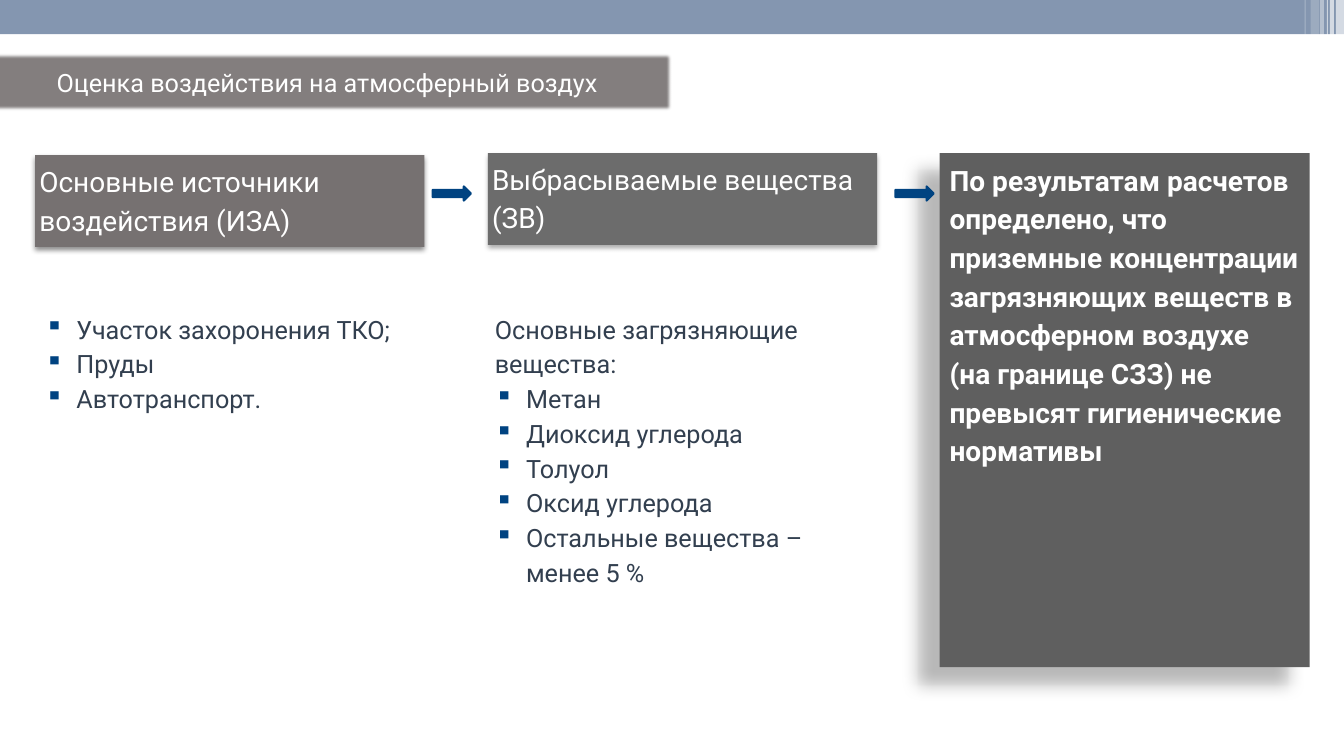
from dataclasses import dataclass

from lxml import etree
from pptx import Presentation
from pptx.dml.color import RGBColor
from pptx.enum.shapes import MSO_SHAPE
from pptx.enum.text import MSO_ANCHOR, MSO_AUTO_SIZE, PP_ALIGN
from pptx.oxml.ns import qn
from pptx.util import Inches, Pt

RECT, ARROW = MSO_SHAPE.RECTANGLE, MSO_SHAPE.RIGHT_ARROW
TOP, MIDDLE = MSO_ANCHOR.TOP, MSO_ANCHOR.MIDDLE
LEFT, CENTER = PP_ALIGN.LEFT, PP_ALIGN.CENTER
GROW = MSO_AUTO_SIZE.SHAPE_TO_FIT_TEXT


@dataclass(frozen=True)
class Theme:
    font: str = "Roboto"
    head: int = 20
    body: int = 18
    white: str = "FFFFFF"
    bar: str = "8496B0"
    banner: str = "767171"
    source: str = "767171"
    matter: str = "6C6C6C"
    result: str = "5F5F5F"
    accent: str = "004381"
    ink: str = "323F4F"
    shade: str = "000000"
    spacing: float = 1.15


def add(parent, tag, **attrs):
    """Append a DrawingML child with the given attributes."""
    node = etree.SubElement(parent, qn(f"a:{tag}"))
    for name, value in attrs.items():
        node.set(name, str(value))
    return node


class Deck:
    def __init__(self, theme):
        self.theme = theme
        self.prs = Presentation()
        self.prs.slide_width = Inches(13.33)
        self.prs.slide_height = Inches(7.5)
        self.slide = self.prs.slides.add_slide(self.prs.slide_layouts[6])

    def shape(self, box, color, kind=RECT, alpha=100):
        item = self.slide.shapes.add_shape(kind, *map(Inches, box))
        item.shadow.inherit = False
        item.fill.solid()
        item.fill.fore_color.rgb = RGBColor.from_string(color)
        item.line.fill.background()
        if alpha < 100:
            tint = item._element.spPr.find(qn("a:solidFill"))[0]
            add(tint, "alpha", val=alpha * 1000)
        return item

    def effects(self, item):
        return item._element.spPr.find(qn("a:effectLst"))

    def shadow(self, item, alpha, blur, dist, angle):
        cast = add(self.effects(item), "outerShdw", blurRad=Pt(blur),
                   dist=Pt(dist), dir=angle * 60000, rotWithShape=0)
        tint = add(cast, "srgbClr", val=self.theme.shade)
        add(tint, "alpha", val=alpha * 1000)

    def soften(self, item, radius):
        add(self.effects(item), "softEdge", rad=Pt(radius))

    def label(self, item, lines, size, color, bold=False, inset=None,
              anchor=TOP, align=LEFT, spacing=None):
        frame = item.text_frame
        frame.word_wrap = True
        frame.vertical_anchor = anchor
        if inset is not None:
            frame.margin_left = frame.margin_right = Inches(inset)
            frame.margin_top = frame.margin_bottom = Inches(inset)
        frame.text = "\n".join(lines)
        for para in frame.paragraphs:
            para.alignment = align
            para.line_spacing = spacing
            for run in para.runs:
                run.font.name = self.theme.font
                run.font.size = Pt(size)
                run.font.bold = bold
                run.font.color.rgb = RGBColor.from_string(color)

    def panel(self, box, color, lines, shadow, **style):
        item = self.shape(box, color)
        self.shadow(item, *shadow)
        self.label(item, lines, self.theme.head, self.theme.white,
                   spacing=self.theme.spacing, **style)

    def arrow(self, left, top):
        item = self.shape((left, top, 0.38, 0.14), self.theme.accent, ARROW)
        item.line.color.rgb = RGBColor.from_string(self.theme.accent)
        item.line.width = Pt(1.5)

    def bullets(self, box, items, intro=()):
        item = self.slide.shapes.add_textbox(*map(Inches, box))
        self.label(item, [*intro, *items], self.theme.body, self.theme.ink,
                   spacing=self.theme.spacing)
        item.text_frame.auto_size = GROW
        for para in item.text_frame.paragraphs[len(intro):]:
            props = para._p.get_or_add_pPr()
            props.set("marL", str(Inches(0.31)))
            props.set("indent", str(Inches(-0.31)))
            add(add(props, "buClr"), "srgbClr", val=self.theme.accent)
            add(props, "buChar", char="▪")


def main():
    theme = Theme()
    deck = Deck(theme)

    # Top bar with fading stripes at the right end
    deck.shape((0, 0, 13.33, 0.34), theme.bar)
    stripes = [(13.25, 0.08, 0.68, 65), (13.19, 0.04, 0.68, 65),
               (13.16, 0.01, 0.68, 60), (13.09, 0.04, 0.68, 40),
               (13, 0.08, 0.64, 20), (12.94, 0.01, 0.64, 30)]
    for left, width, height, alpha in stripes:
        deck.shape((left, 0, width, height), theme.white, alpha=alpha)

    # Title banner
    banner = deck.shape((-0.18, 0.52, 6.85, 0.59), theme.banner, alpha=90)
    deck.soften(banner, 2.5)
    deck.label(banner, ["Оценка воздействия на атмосферный воздух"],
               theme.body, theme.white, anchor=MIDDLE, align=CENTER)

    # Three panels: sources, substances, result
    deck.panel((0.35, 1.54, 3.86, 0.91), theme.source,
               ["Основные источники воздействия (ИЗА)"],
               (45, 4, 2, 90), inset=0.04)
    deck.panel((4.84, 1.52, 3.86, 0.91), theme.matter,
               ["Выбрасываемые вещества (ЗВ)"],
               (32, 3.5, 2.2, 90), inset=0.04)
    deck.panel((9.32, 1.52, 3.67, 5.1), theme.result,
               ["По результатам расчетов определено, что приземные "
                "концентрации загрязняющих веществ в атмосферном воздухе",
                "(на границе СЗЗ) не превысят гигиенические нормативы"],
               (28, 11.8, 19.7, 141), bold=True)

    # Arrows between the panels
    for left in (4.29, 8.88):
        deck.arrow(left, 1.85)

    # Lists under the first two panels
    deck.bullets((0.35, 3.02, 3.79, 1.12),
                 ["Участок захоронения ТКО;", "Пруды", "Автотранспорт."])
    deck.bullets((4.81, 3.02, 3.86, 2.86),
                 ["Метан", "Диоксид углерода", "Толуол", "Оксид углерода",
                  "Остальные вещества – менее 5 %"],
                 intro=["Основные загрязняющие вещества:"])

    deck.prs.save("out.pptx")


if __name__ == "__main__":
    main()
